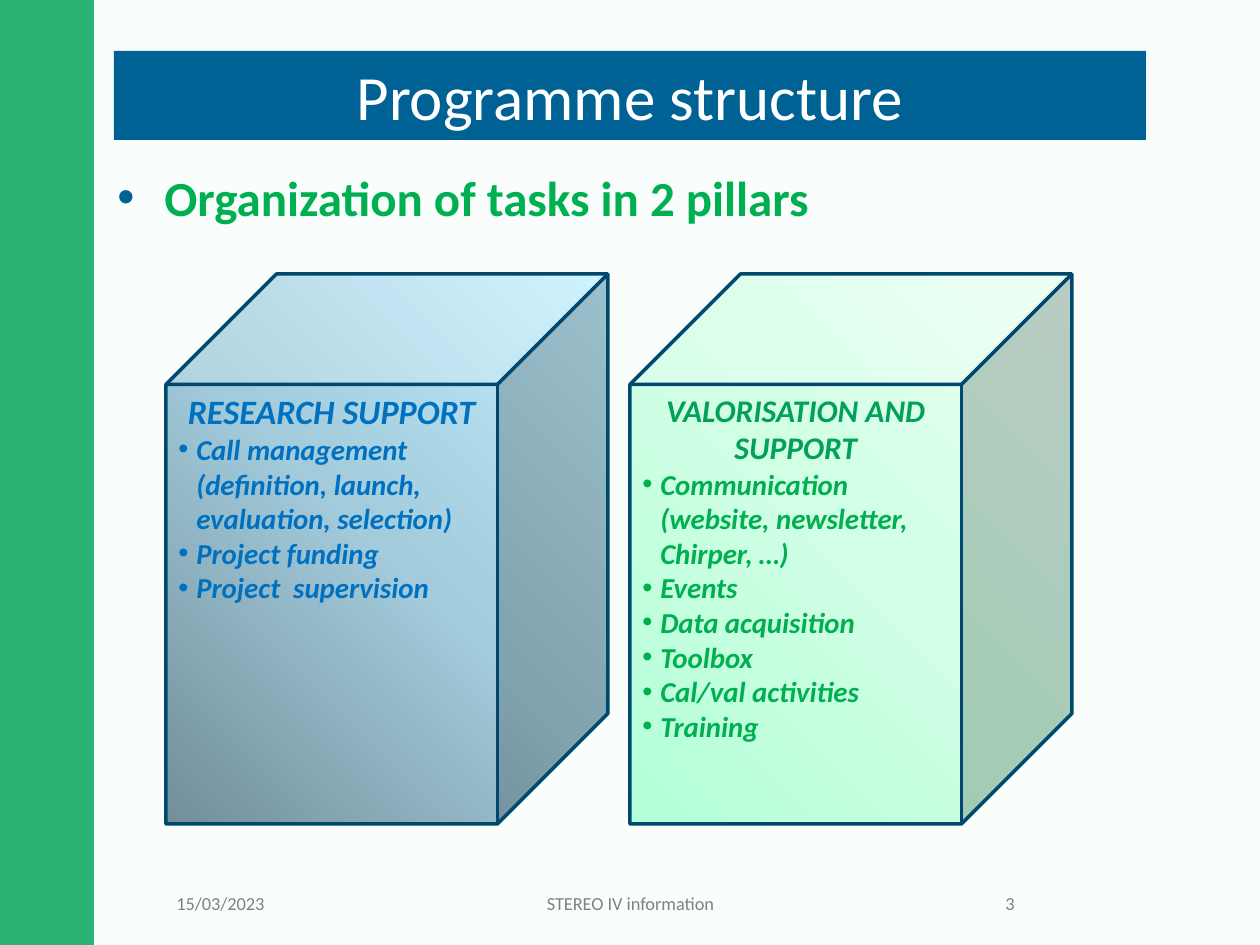
from lxml.etree import SubElement
from pptx import Presentation
from pptx.dml.color import RGBColor
from pptx.enum.shapes import MSO_SHAPE as Shape
from pptx.enum.text import MSO_ANCHOR as Anchor, PP_ALIGN as Align
from pptx.oxml.ns import qn
from pptx.util import Emu, Pt

EMU_PER_PX = 914400 / 126
PAGE_WIDTH, PAGE_HEIGHT = 1260, 945
BAND_WIDTH = 94
FONT = "Calibri"
COLORS = {
    "background": "CAFBED", "band": "03A158", "white": "FFFFFF",
    "title": "006195", "heading": "00B050", "footer": "808080",
    "outline": "00486E", "research": "0070C0",
}
RESEARCH_GRADIENT = ("728F9A", "A2CBDB", "C4EFFF")
SUPPORT_GRADIENT = ("B3FFD7", "D0FFE5", "E8FFF2")
RESEARCH_TASKS = (
    "Call management (definition, launch, evaluation, selection)",
    "Project funding",
    "Project  supervision",
)
SUPPORT_TASKS = (
    "Communication (website, newsletter, Chirper, …)",
    "Events", "Data acquisition", "Toolbox", "Cal/val activities", "Training",
)


def px(length):
    return Emu(round(length * EMU_PER_PX))


def color(name):
    return RGBColor.from_string(COLORS[name])


def add_panel(page, place, fill, opacity=100, kind=Shape.RECTANGLE):
    panel = page.shapes.add_shape(kind, *map(px, place))
    panel.shadow.inherit = False
    panel.line.fill.background()
    panel.fill.solid()
    panel.fill.fore_color.rgb = color(fill)
    if opacity < 100:
        tone = panel.fill._xPr.find(f".//{qn('a:srgbClr')}")
        SubElement(tone, qn("a:alpha"), val=str(opacity * 1000))
    return panel


def add_text_box(page, place, anchor=Anchor.TOP):
    box = page.shapes.add_textbox(*map(px, place))
    box.text_frame.word_wrap = True
    box.text_frame.vertical_anchor = anchor
    return box


def add_bullet(para, indent, tone=None):
    properties = para._p.get_or_add_pPr()
    properties.set("marL", str(px(indent)))
    properties.set("indent", str(-px(indent)))
    if tone:
        bullet_color = SubElement(properties, qn("a:buClr"))
        SubElement(bullet_color, qn("a:srgbClr"), val=COLORS[tone])
    SubElement(properties, qn("a:buFont"), typeface="Arial")
    SubElement(properties, qn("a:buChar"), char="•")


def write(para, text, tone, size, align=Align.LEFT, **formats):
    para.alignment = align
    span = para.add_run()
    span.text = text
    span.font.color.rgb = color(tone)
    for name, value in {"name": FONT, "size": Pt(size), **formats}.items():
        setattr(span.font, name, value)


def set_corner_gradient(shape, tones):
    """Spread the tones in circles from the lower left corner."""
    shape.fill.gradient()
    gradient = shape.fill._xPr.find(qn("a:gradFill"))
    for child in list(gradient):
        gradient.remove(child)
    stops = SubElement(gradient, qn("a:gsLst"))
    for index, tone in enumerate(tones):
        stop = SubElement(stops, qn("a:gs"), pos=str(index * 50000))
        SubElement(stop, qn("a:srgbClr"), val=tone)
    circle = SubElement(gradient, qn("a:path"), path="circle")
    SubElement(circle, qn("a:fillToRect"), t="100000", r="100000")


def add_backdrop(page):
    page.background.fill.solid()
    page.background.fill.fore_color.rgb = color("background")
    add_panel(page, (0, 0, BAND_WIDTH, PAGE_HEIGHT), "band", 80)
    add_panel(page, (BAND_WIDTH, 0, PAGE_WIDTH - BAND_WIDTH, PAGE_HEIGHT), "white", 90)


def add_title(page, place, text):
    frame = add_panel(page, place, "title").text_frame
    frame.word_wrap = True
    frame.vertical_anchor = Anchor.MIDDLE
    write(frame.paragraphs[0], text, "white", 36, Align.CENTER)


def add_heading(page, place, text):
    para = add_text_box(page, place).text_frame.paragraphs[0]
    add_bullet(para, 47, "title")
    para.line_spacing = 1.1
    write(para, text, "heading", 28, bold=True)


def add_pillar(page, place, gradient, heading, tasks, task_tone):
    """Draw a cube with a (text, tone, size) heading above bulleted tasks."""
    cube = add_panel(page, place, "white", kind=Shape.CUBE)
    set_corner_gradient(cube, gradient)
    cube.line.color.rgb = color("outline")
    cube.line.width = Pt(2)
    frame = cube.text_frame
    frame.word_wrap = True
    frame.vertical_anchor = Anchor.TOP
    style = {"bold": True, "italic": True}
    write(frame.paragraphs[0], *heading, Align.CENTER, **style)
    for task in tasks:
        para = frame.add_paragraph()
        add_bullet(para, 18)
        write(para, task, task_tone, 16.5, **style)


def add_footer(page, left, top, height):
    parts = (
        (0, 149, "15/03/2023", Align.LEFT),
        (149, 635, "STEREO IV information", Align.CENTER),
        (804, 59, "3", Align.RIGHT),
    )
    for offset, width, text, align in parts:
        box = add_text_box(page, (left + offset, top, width, height), Anchor.MIDDLE)
        write(box.text_frame.paragraphs[0], text, "footer", 10.5, align)


def main():
    deck = Presentation()
    deck.slide_width, deck.slide_height = px(PAGE_WIDTH), px(PAGE_HEIGHT)
    page = deck.slides.add_slide(deck.slide_layouts[6])
    add_backdrop(page)
    add_title(page, (114, 51, 1032, 89), "Programme structure")
    add_heading(page, (105, 155, 1155, 735), "Organization of tasks in 2 pillars")
    add_footer(page, 164, 878, 50)
    add_pillar(page, (166, 274, 442, 550), RESEARCH_GRADIENT,
               ("RESEARCH SUPPORT", "research", 19.5), RESEARCH_TASKS, "research")
    add_pillar(page, (630, 274, 442, 550), SUPPORT_GRADIENT,
               ("VALORISATION AND SUPPORT", "band", 18), SUPPORT_TASKS, "heading")
    deck.save("out.pptx")


if __name__ == "__main__":
    main()
